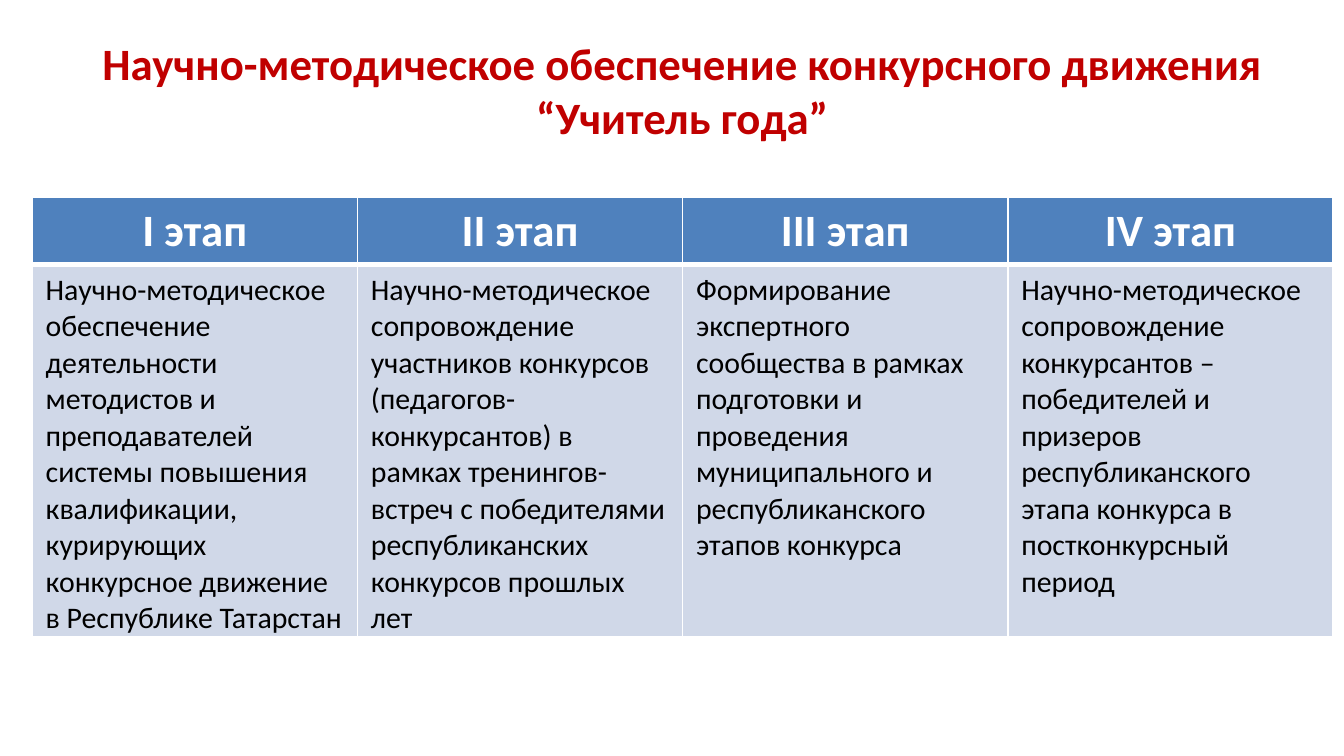
from lxml import etree
from pptx import Presentation
from pptx.dml.color import RGBColor
from pptx.enum.text import MSO_ANCHOR, PP_ALIGN
from pptx.oxml.ns import qn
from pptx.util import Inches, Pt

CENTER, LEFT = PP_ALIGN.CENTER, PP_ALIGN.LEFT
MIDDLE = MSO_ANCHOR.MIDDLE
FONT = "Calibri"
COLORS = {
    "title": "C00000",
    "header": "4F81BD",
    "body": "D0D8E8",
    "white": "FFFFFF",
    "black": "000000",
}

TITLE = "Научно-методическое обеспечение конкурсного движения “Учитель года”"
STAGES = [
    ("I этап", "Научно-методическое обеспечение деятельности методистов и "
     "преподавателей системы повышения квалификации, курирующих конкурсное "
     "движение в Республике Татарстан"),
    ("II этап", "Научно-методическое сопровождение участников конкурсов "
     "(педагогов-конкурсантов) в рамках тренингов-встреч с победителями "
     "республиканских конкурсов прошлых лет"),
    ("III этап", "Формирование экспертного сообщества в рамках подготовки и "
     "проведения муниципального и республиканского этапов конкурса"),
    ("IV этап", "Научно-методическое сопровождение конкурсантов – победителей "
     "и призеров республиканского этапа конкурса в постконкурсный период"),
]
SLIDE_WIDTH = Inches(10)
SLIDE_HEIGHT = SLIDE_WIDTH * 9 // 16
COLUMN_WIDTH = 2.42
ROW_HEIGHTS = [0.5, 2.77]


def write(frame, text, size, color, bold, align):
    frame.text = text
    paragraph = frame.paragraphs[0]
    paragraph.alignment = align
    font = paragraph.runs[0].font
    font.name, font.size, font.bold = FONT, Pt(size), bold
    font.color.rgb = RGBColor.from_string(COLORS[color])


def add_borders(cell, widths):
    properties = cell._tc.get_or_add_tcPr()
    for side, width in widths.items():
        line = etree.SubElement(properties, qn("a:ln" + side), w=str(Pt(width)))
        fill = etree.SubElement(line, qn("a:solidFill"))
        etree.SubElement(fill, qn("a:srgbClr"), val=COLORS["white"])


def fill_cell(cell, text, size, color, bold, align, background, widths):
    write(cell.text_frame, text, size, color, bold, align)
    add_borders(cell, widths)
    cell.fill.solid()
    cell.fill.fore_color.rgb = RGBColor.from_string(COLORS[background])


prs = Presentation()
prs.slide_width, prs.slide_height = SLIDE_WIDTH, SLIDE_HEIGHT
slide = prs.slides.add_slide(prs.slide_layouts[6])

title = slide.shapes.add_textbox(Inches(0.43), Inches(0.21), Inches(9.29), Inches(0.91))
title.text_frame.word_wrap = True
title.text_frame.vertical_anchor = MIDDLE
write(title.text_frame, TITLE, 24, "title", True, CENTER)

stages = slide.shapes.add_table(
    2, len(STAGES), Inches(0.24), Inches(1.47),
    Inches(COLUMN_WIDTH * len(STAGES)), Inches(sum(ROW_HEIGHTS))).table
for row, height in zip(stages.rows, ROW_HEIGHTS):
    row.height = Inches(height)
for column, (stage, task) in enumerate(STAGES):
    stages.columns[column].width = Inches(COLUMN_WIDTH)
    fill_cell(stages.cell(0, column), stage, 24, "white", True, CENTER,
              "header", {"L": 1, "R": 1, "T": 1, "B": 3})
    fill_cell(stages.cell(1, column), task, 16, "black", False, LEFT,
              "body", {"L": 1, "R": 1, "T": 3, "B": 1})

prs.save("out.pptx")
